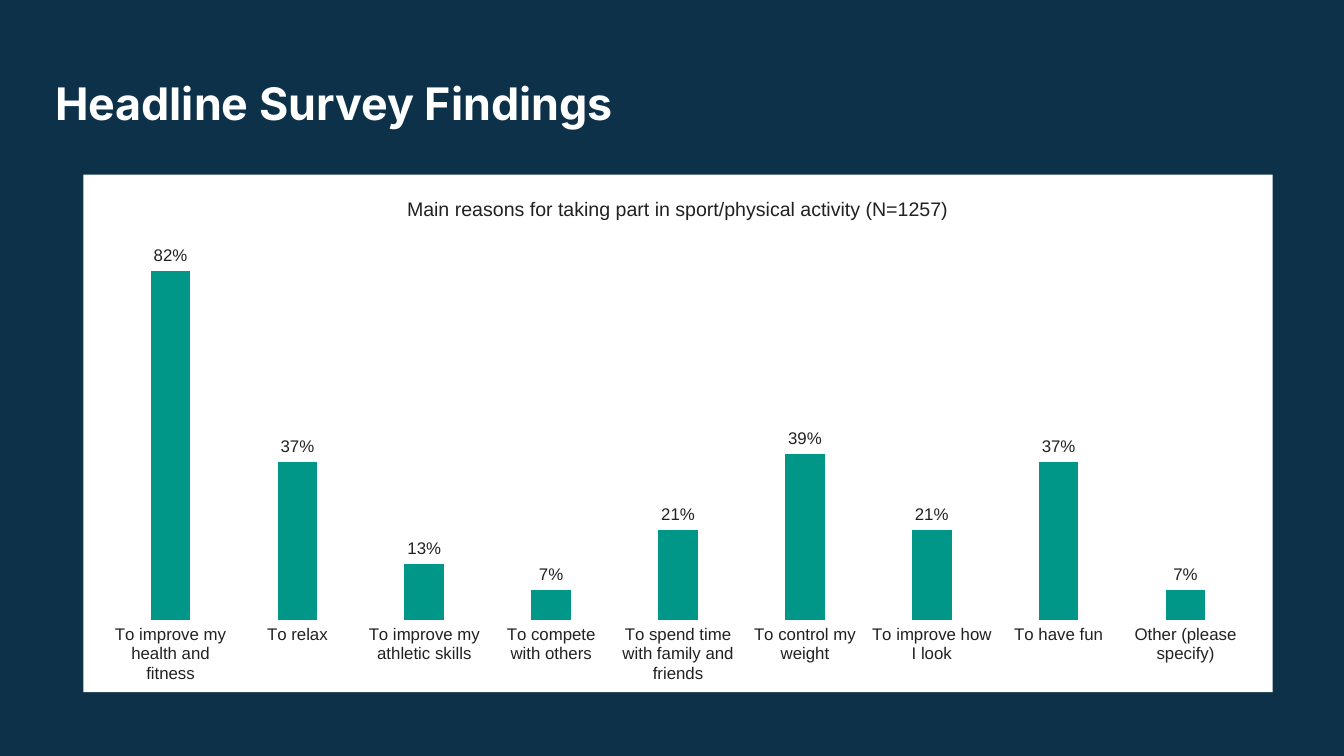
from dataclasses import dataclass

from pptx import Presentation
from pptx.chart.data import CategoryChartData
from pptx.dml.color import RGBColor
from pptx.enum.chart import XL_CHART_TYPE, XL_LABEL_POSITION, XL_TICK_MARK
from pptx.enum.text import MSO_ANCHOR, MSO_AUTO_SIZE, PP_ALIGN
from pptx.oxml import parse_xml
from pptx.oxml.ns import nsdecls
from pptx.util import Inches, Pt


@dataclass(frozen=True)
class Theme:
    background: str = "0D3148"
    white: str = "FFFFFF"
    text: str = "212121"
    bar: str = "009688"
    heading_font: str = "Inter"
    chart_font: str = "Arial"
    heading_size: float = 24
    chart_title_size: float = 10.5
    label_size: float = 9


REASONS = {
    "To improve my health and fitness": 0.82,
    "To relax": 0.37,
    "To improve my athletic skills": 0.13,
    "To compete with others": 0.07,
    "To spend time with family and friends": 0.21,
    "To control my weight": 0.39,
    "To improve how I look": 0.21,
    "To have fun": 0.37,
    "Other (please specify)": 0.07,
}


class SlideBuilder:
    def __init__(self, presentation, theme):
        self.theme = theme
        self.slide = presentation.slides.add_slide(presentation.slide_layouts[5])
        self.fill(self.slide.background, theme.background)

    def fill(self, target, color):
        target.fill.solid()
        target.fill.fore_color.rgb = RGBColor.from_string(color)

    def style_font(self, font, name, size, color, bold=False):
        font.name = name
        font.size = Pt(size)
        font.bold = bold
        font.color.rgb = RGBColor.from_string(color)

    def title(self, text, left, top, width, height):
        title = self.slide.shapes.title
        title.left, title.top = Inches(left), Inches(top)
        title.width, title.height = Inches(width), Inches(height)
        frame = title.text_frame
        frame.text = text
        frame.auto_size = MSO_AUTO_SIZE.NONE
        frame.word_wrap = True
        frame.vertical_anchor = MSO_ANCHOR.BOTTOM
        frame.margin_left = frame.margin_right = Inches(0.1)
        frame.margin_top = frame.margin_bottom = Inches(0.1)
        paragraph = frame.paragraphs[0]
        paragraph.alignment = PP_ALIGN.LEFT
        self.style_font(paragraph.runs[0].font, self.theme.heading_font,
                        self.theme.heading_size, self.theme.white, bold=True)

    def column_chart(self, title, values, left, top, width, height):
        theme = self.theme
        data = CategoryChartData(number_format="0%")
        data.categories = list(values)
        data.add_series("Series 1", list(values.values()))
        chart = self.slide.shapes.add_chart(
            XL_CHART_TYPE.COLUMN_CLUSTERED, Inches(left), Inches(top),
            Inches(width), Inches(height), data).chart
        chart.has_legend = False
        self.style_font(chart.font, theme.chart_font, theme.label_size, theme.text)
        self.chart_area(chart)

        frame = chart.chart_title.text_frame
        frame.text = title
        self.style_font(frame.paragraphs[0].runs[0].font, theme.chart_font,
                        theme.chart_title_size, theme.text)
        chart.chart_title.include_in_layout = False

        category_axis = chart.category_axis
        category_axis.major_tick_mark = XL_TICK_MARK.NONE
        category_axis.format.line.color.rgb = RGBColor.from_string(theme.white)
        category_axis.format.line.width = Pt(0.75)
        value_axis = chart.value_axis
        value_axis.minimum_scale, value_axis.maximum_scale = 0, 0.9
        gridline = value_axis.major_gridlines.format.line
        gridline.color.rgb = RGBColor.from_string(theme.white)
        gridline.width = Pt(0.75)
        value_axis.visible = False

        plot = chart.plots[0]
        plot.gap_width, plot.overlap = 219, -27
        plot.vary_by_categories = False
        series = plot.series[0]
        self.fill(series.format, theme.bar)
        labels = series.data_labels
        labels.show_value = True
        labels.number_format, labels.number_format_is_linked = "0%", False
        labels.position = XL_LABEL_POSITION.OUTSIDE_END
        self.style_font(labels.font, theme.chart_font, theme.label_size, theme.text)

    def chart_area(self, chart):
        """Give the chart a plain white background and a fixed plot area."""
        chart_xml = chart.element.find("{*}chart")
        chart_xml.addnext(parse_xml(
            f'<c:spPr {nsdecls("c", "a")}><a:solidFill>'
            f'<a:srgbClr val="{self.theme.white}"/></a:solidFill>'
            '<a:ln><a:noFill/></a:ln></c:spPr>'))
        plot_area = chart_xml.find("{*}plotArea")
        for layout in plot_area.findall("{*}layout"):
            plot_area.remove(layout)
        bounds = {"x": 0.02, "y": 0.12, "w": 0.96, "h": 0.74}
        sizes = "".join(f'<c:{key} val="{value}"/>' for key, value in bounds.items())
        plot_area.insert(0, parse_xml(
            f'<c:layout {nsdecls("c")}><c:manualLayout><c:layoutTarget val="inner"/>'
            '<c:xMode val="edge"/><c:yMode val="edge"/>'
            f'{sizes}</c:manualLayout></c:layout>'))


def main():
    presentation = Presentation()
    presentation.slide_width = Inches(10)
    presentation.slide_height = presentation.slide_width * 9 // 16
    builder = SlideBuilder(presentation, Theme())
    builder.column_chart(
        "Main reasons for taking part in sport/physical activity (N=1257)",
        REASONS, 0.62, 1.3, 8.85, 3.85)
    builder.title("Headline Survey Findings", 0.31, 0.23, 5.16, 0.83)
    presentation.save("out.pptx")


if __name__ == "__main__":
    main()
